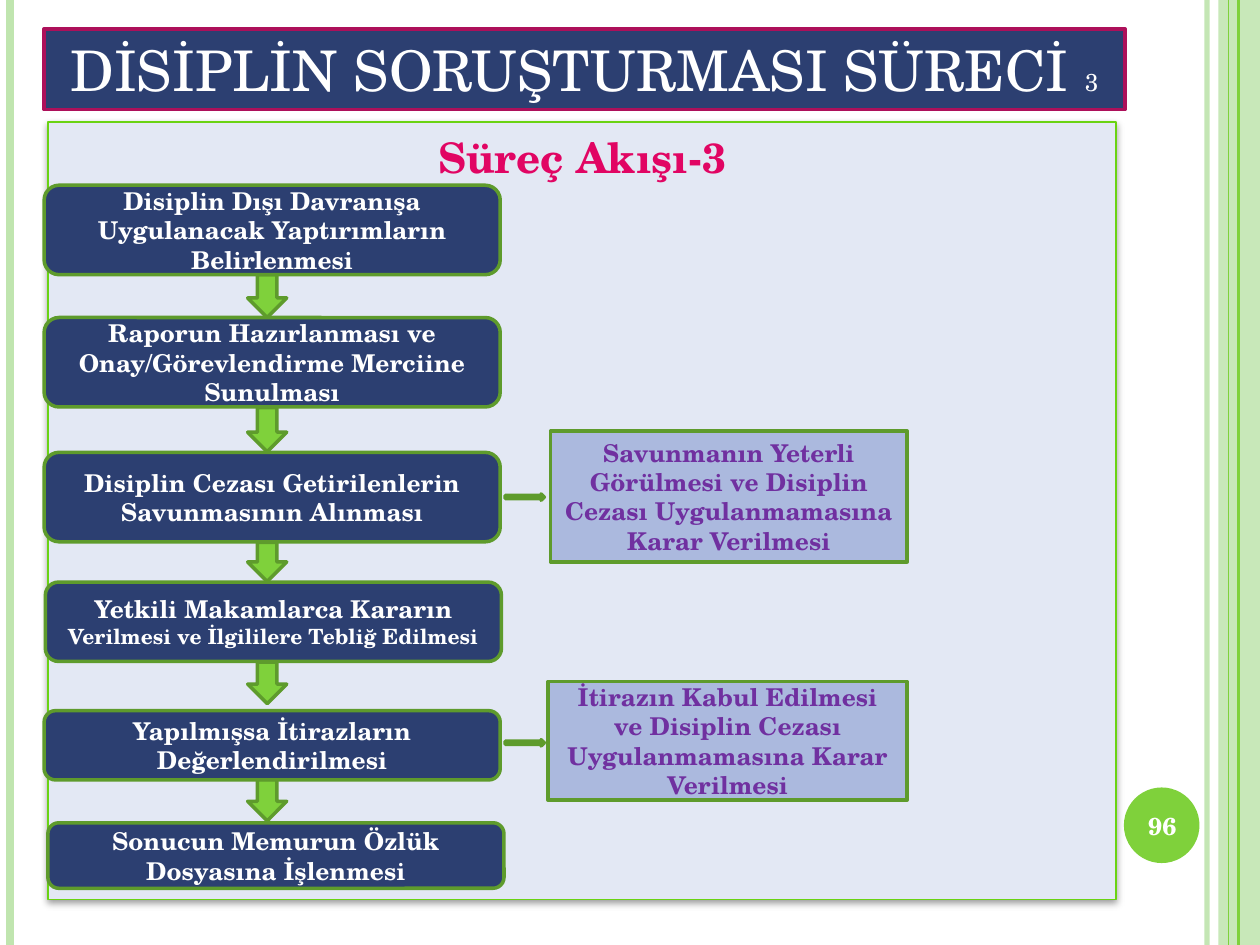
from dataclasses import dataclass

from lxml.etree import SubElement
from pptx import Presentation
from pptx.dml.color import RGBColor
from pptx.enum.shapes import MSO_CONNECTOR, MSO_SHAPE as Shape
from pptx.enum.text import MSO_ANCHOR as Anchor, PP_ALIGN as Align
from pptx.oxml import parse_xml
from pptx.oxml.ns import nsdecls, qn
from pptx.util import Inches, Pt


@dataclass(frozen=True)
class Theme:
    font: str = "TeX Gyre Schola"
    white: str = "FFFFFF"
    navy: str = "2C3F71"
    green: str = "7FD13B"
    dark_green: str = "5E9B2C"
    pale_green: str = "C0E5AF"
    panel: str = "E3E8F4"
    panel_edge: str = "6AD312"
    title_edge: str = "AD105A"
    heading: str = "E10563"
    outcome: str = "ABB9DE"
    outcome_text: str = "7030A0"
    title_size: int = 32
    heading_size: int = 24
    text_size: int = 14
    small_size: int = 12


THEME = Theme()
STEP_LEFT, STEP_WIDTH = 0.35, 3.62
ARROW_CENTER, ARROW_WIDTH = 2.12, 0.31

# left, top, height, runs
STEPS = [
    (STEP_LEFT, 1.47, 0.71,
     [("Disiplin Dışı Davranışa Uygulanacak Yaptırımların Belirlenmesi", THEME.text_size)]),
    (STEP_LEFT, 2.52, 0.71,
     [("Raporun Hazırlanması ve Onay/Görevlendirme Merciine Sunulması", THEME.text_size)]),
    (STEP_LEFT, 3.59, 0.71,
     [("Disiplin Cezası Getirilenlerin Savunmasının Alınması", THEME.text_size)]),
    (0.36, 4.62, 0.63,
     [("Yetkili Makamlarca Kararın ", THEME.text_size),
      ("Verilmesi ve İlgililere Tebliğ Edilmesi", THEME.small_size)]),
    (STEP_LEFT, 5.64, 0.55,
     [("Yapılmışsa İtirazların Değerlendirilmesi", THEME.text_size)]),
    (0.38, 6.53, 0.52,
     [("Sonucun Memurun Özlük Dosyasına İşlenmesi", THEME.text_size)]),
]
# center height, length
DOWN_ARROWS = [(2.35, 0.34), (3.41, 0.35), (4.46, 0.31), (5.42, 0.33), (6.35, 0.33)]
# box frame, arrow top, text
OUTCOMES = [
    ((4.37, 3.42, 2.83, 1.04), 3.92,
     "Savunmanın Yeterli Görülmesi ve Disiplin Cezası Uygulanmamasına Karar Verilmesi"),
    ((4.35, 5.41, 2.85, 0.94), 5.87,
     "İtirazın Kabul Edilmesi ve Disiplin Cezası Uygulanmamasına Karar Verilmesi"),
]
# x, colour, width, opacity
RULES = [
    (9.58, THEME.pale_green, 3, 93),
    (0.08, THEME.pale_green, 4.5, 100),
    (9.83, THEME.green, 1.5, 100),
    (9.75, THEME.green, 0.75, 100),
]


def apply(target, values):
    for name, value in values.items():
        setattr(target, name, value)


def place(shape, frame):
    names = ("left", "top", "width", "height")
    apply(shape, dict(zip(names, map(Inches, frame))))


def set_opacity(fill_parent, percent):
    color = fill_parent.find(".//" + qn("a:srgbClr"))
    SubElement(color, qn("a:alpha"), val=str(percent * 1000))


def paint(shape, fill, line=None, width=2):
    shape.fill.solid()
    shape.fill.fore_color.rgb = RGBColor.from_string(fill)
    if line:
        shape.line.color.rgb = RGBColor.from_string(line)
        shape.line.width = Pt(width)
    else:
        shape.line.fill.background()


def add_shape(slide, kind, frame, fill, line=None):
    shape = slide.shapes.add_shape(kind, *map(Inches, frame))
    shape.shadow.inherit = False
    paint(shape, fill, line)
    return shape


def write(shape, runs, color, bold=True, anchor=Anchor.MIDDLE, inset=0.05):
    """Fill the shape with one centred paragraph of (text, size) runs."""
    frame = shape.text_frame
    apply(frame, {"word_wrap": True, "vertical_anchor": anchor,
                  "margin_top": Inches(inset), "margin_bottom": Inches(inset)})
    para = frame.paragraphs[0]
    apply(para, {"alignment": Align.CENTER, "space_before": Pt(0)})
    for text, size in runs:
        span = para.add_run()
        span.text = text
        apply(span.font, {"name": THEME.font, "size": Pt(size), "bold": bold})
        span.font.color.rgb = RGBColor.from_string(color)
    return para


def add_rule(slide, x, color, width, opacity):
    rule = slide.shapes.add_connector(
        MSO_CONNECTOR.STRAIGHT, Inches(x), Inches(0), Inches(x), Inches(7.5))
    rule.line.color.rgb = RGBColor.from_string(color)
    rule.line.width = Pt(width)
    properties = rule._element.spPr
    if opacity < 100:
        set_opacity(properties, opacity)
    SubElement(properties, qn("a:effectLst"))


def add_side_decoration(slide):
    for rule in RULES:
        add_rule(slide, *rule)
    band = add_shape(slide, Shape.RECTANGLE, (9.67, 0, 0.33, 7.5), THEME.pale_green)
    set_opacity(band._element.spPr, 87)
    # The two thin green rules stay visible above the band.
    slide.shapes._spTree.insert(4, band._element)


def add_page_number(slide):
    add_shape(slide, Shape.OVAL, (8.92, 6.25, 0.6, 0.6), THEME.green)
    box = slide.shapes.add_textbox(*map(Inches, (8.89, 6.27, 0.67, 0.57)))
    write(box, [("96", THEME.text_size)], THEME.white)


def format_title(title):
    place(title, (0.35, 0.23, 8.58, 0.64))
    paint(title, THEME.navy, THEME.title_edge)
    write(title, [("DİSİPLİN SORUŞTURMASI SÜRECİ ", THEME.title_size),
                  ("3", THEME.text_size)], THEME.white, bold=False)


def format_panel(panel):
    place(panel, (0.38, 0.97, 8.48, 6.17))
    paint(panel, THEME.panel, THEME.panel_edge, 1)
    panel._element.spPr.append(parse_xml(
        f'<a:effectLst {nsdecls("a")}><a:outerShdw blurRad="{Pt(4)}" dist="{Pt(2)}" '
        'dir="5400000" rotWithShape="0"><a:srgbClr val="000000"><a:alpha val="40000"/>'
        '</a:srgbClr></a:outerShdw></a:effectLst>'))
    para = write(panel, [("Süreç Akışı-3", THEME.heading_size)], THEME.heading,
                 anchor=Anchor.TOP, inset=0.07)
    properties = para._p.get_or_add_pPr()
    properties.set("marL", "0")
    properties.set("indent", "0")
    SubElement(properties, qn("a:buNone"))


def add_step(slide, left, top, height, runs):
    step = add_shape(slide, Shape.ROUNDED_RECTANGLE, (left, top, STEP_WIDTH, height),
                     THEME.navy, THEME.dark_green)
    write(step, runs, THEME.white)


def add_arrow(slide, frame, rotation=0):
    arrow = add_shape(slide, Shape.RIGHT_ARROW, frame, THEME.green, THEME.dark_green)
    arrow.rotation = rotation


def add_outcome(slide, frame, arrow_top, text):
    add_arrow(slide, (4.01, arrow_top, 0.31, 0.05))
    box = add_shape(slide, Shape.RECTANGLE, frame, THEME.outcome, THEME.dark_green)
    write(box, [(text, THEME.text_size)], THEME.outcome_text)


def main():
    deck = Presentation()
    apply(deck, {"slide_width": Inches(10), "slide_height": Inches(7.5)})
    slide = deck.slides.add_slide(deck.slide_layouts[1])
    add_side_decoration(slide)
    add_page_number(slide)
    format_title(slide.shapes.title)
    format_panel(slide.placeholders[1])
    for center, length in DOWN_ARROWS:
        add_arrow(slide, (ARROW_CENTER - length / 2, center - ARROW_WIDTH / 2,
                          length, ARROW_WIDTH), 90)
    for step in STEPS:
        add_step(slide, *step)
    for outcome in OUTCOMES:
        add_outcome(slide, *outcome)
    deck.save("out.pptx")


if __name__ == "__main__":
    main()
